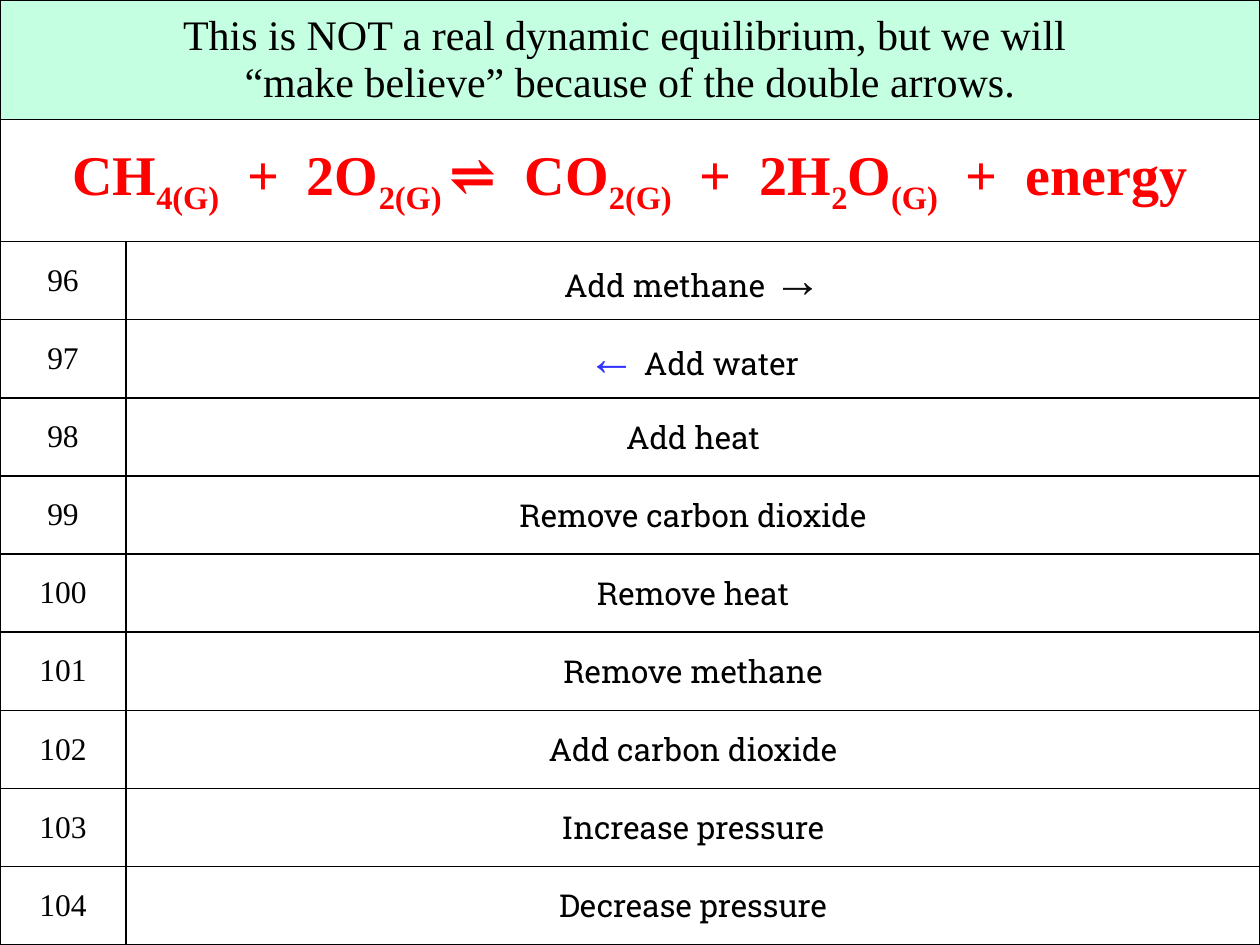
import pptx
import pptx.dml.color
import pptx.enum.text
import pptx.oxml.ns
import pptx.util
from lxml import etree
from pptx.util import Cm

COLORS = {
    "black": "000000",
    "mint": "C5FFE2",
    "red": "FF0000",
    "blue": "3333FF",
    "near_black": "0D0D0D",
}
SERIF = "Times New Roman"
SLAB = "Roboto Slab"
SLIDE_WIDTH, SLIDE_HEIGHT = Cm(25.4), Cm(19.05)
NUMBER_WIDTH = Cm(2.54)
NOTE_HEIGHT, EQUATION_HEIGHT = Cm(2.41), Cm(2.46)
FIRST_NUMBER = 96

NOTE_LINES = [
    "This is NOT a real dynamic equilibrium, but we will ",
    "“make believe” because of the double arrows.",
]
# Normal and subscript parts alternate.
EQUATION = ["CH", "4(G)", "  +  2O", "2(G) ", "⇌  CO", "2(G)",
            "  +  2H", "2", "O", "(G)", "  +  energy"]
CHANGES = [
    [("Add methane ", {"font": SLAB}),
     ("→", {"size": 28, "color": "near_black"})],
    [("←", {"size": 28, "color": "blue"}),
     (" ", {"color": "blue"}),
     ("Add water", {"font": SLAB})],
] + [[(change, {"font": SLAB})] for change in (
    "Add heat", "Remove carbon dioxide", "Remove heat", "Remove methane",
    "Add carbon dioxide", "Increase pressure", "Decrease pressure")]


def add_text(paragraph, text, font=SERIF, size=18, color="black",
             bold=False, subscript=False):
    run = paragraph.add_run()
    run.text = text
    run.font.name = font
    run.font.size = pptx.util.Pt(size)
    run.font.bold = bold
    run.font.color.rgb = pptx.dml.color.RGBColor.from_string(COLORS[color])
    if subscript:
        run.font._element.set("baseline", "-25000")


def set_borders(cell):
    properties = cell._tc.get_or_add_tcPr()
    for position, side in enumerate(("lnL", "lnR", "lnT", "lnB")):
        line = etree.Element(pptx.oxml.ns.qn(f"a:{side}"), w="12700")
        fill = etree.SubElement(line, pptx.oxml.ns.qn("a:solidFill"))
        etree.SubElement(fill, pptx.oxml.ns.qn("a:srgbClr"),
                         val=COLORS["black"])
        properties.insert(position, line)


def format_cell(cell, fill=None):
    """Set fill, borders and centring; return the cell's paragraph."""
    if fill:
        cell.fill.solid()
        cell.fill.fore_color.rgb = pptx.dml.color.RGBColor.from_string(
            COLORS[fill])
    else:
        cell.fill.background()
    set_borders(cell)
    cell.vertical_anchor = pptx.enum.text.MSO_ANCHOR.MIDDLE
    paragraph = cell.text_frame.paragraphs[0]
    paragraph.alignment = pptx.enum.text.PP_ALIGN.CENTER
    return paragraph


def add_grid(slide):
    grid = slide.shapes.add_table(len(CHANGES) + 2, 2, 0, 0,
                                  SLIDE_WIDTH, SLIDE_HEIGHT).table
    grid.first_row = grid.horz_banding = False
    grid.columns[0].width = NUMBER_WIDTH
    grid.columns[1].width = SLIDE_WIDTH - NUMBER_WIDTH
    change_height = (SLIDE_HEIGHT - NOTE_HEIGHT - EQUATION_HEIGHT) // len(CHANGES)
    heights = [NOTE_HEIGHT, EQUATION_HEIGHT] + [change_height] * len(CHANGES)
    for row, height in zip(grid.rows, heights):
        row.height = height
    return grid


def add_full_row(grid, row, fill=None):
    """Merge a row over both columns and return its paragraph."""
    grid.cell(row, 0).merge(grid.cell(row, 1))
    format_cell(grid.cell(row, 1), fill)
    return format_cell(grid.cell(row, 0), fill)


def fill_note(grid):
    note = add_full_row(grid, 0, fill="mint")
    add_text(note, NOTE_LINES[0], size=24)
    note.add_line_break()
    add_text(note, NOTE_LINES[1], size=24)


def fill_equation(grid):
    equation = add_full_row(grid, 1)
    for index, part in enumerate(EQUATION):
        add_text(equation, part, size=32, color="red", bold=True,
                 subscript=index % 2 == 1)


def fill_changes(grid):
    for index, parts in enumerate(CHANGES):
        number = format_cell(grid.cell(index + 2, 0))
        add_text(number, str(FIRST_NUMBER + index))
        change = format_cell(grid.cell(index + 2, 1))
        for text, style in parts:
            add_text(change, text, **style)


def main():
    deck = pptx.Presentation()
    deck.slide_width, deck.slide_height = SLIDE_WIDTH, SLIDE_HEIGHT
    slide = deck.slides.add_slide(deck.slide_layouts[6])
    grid = add_grid(slide)
    fill_note(grid)
    fill_equation(grid)
    fill_changes(grid)
    deck.save("out.pptx")


if __name__ == "__main__":
    main()
